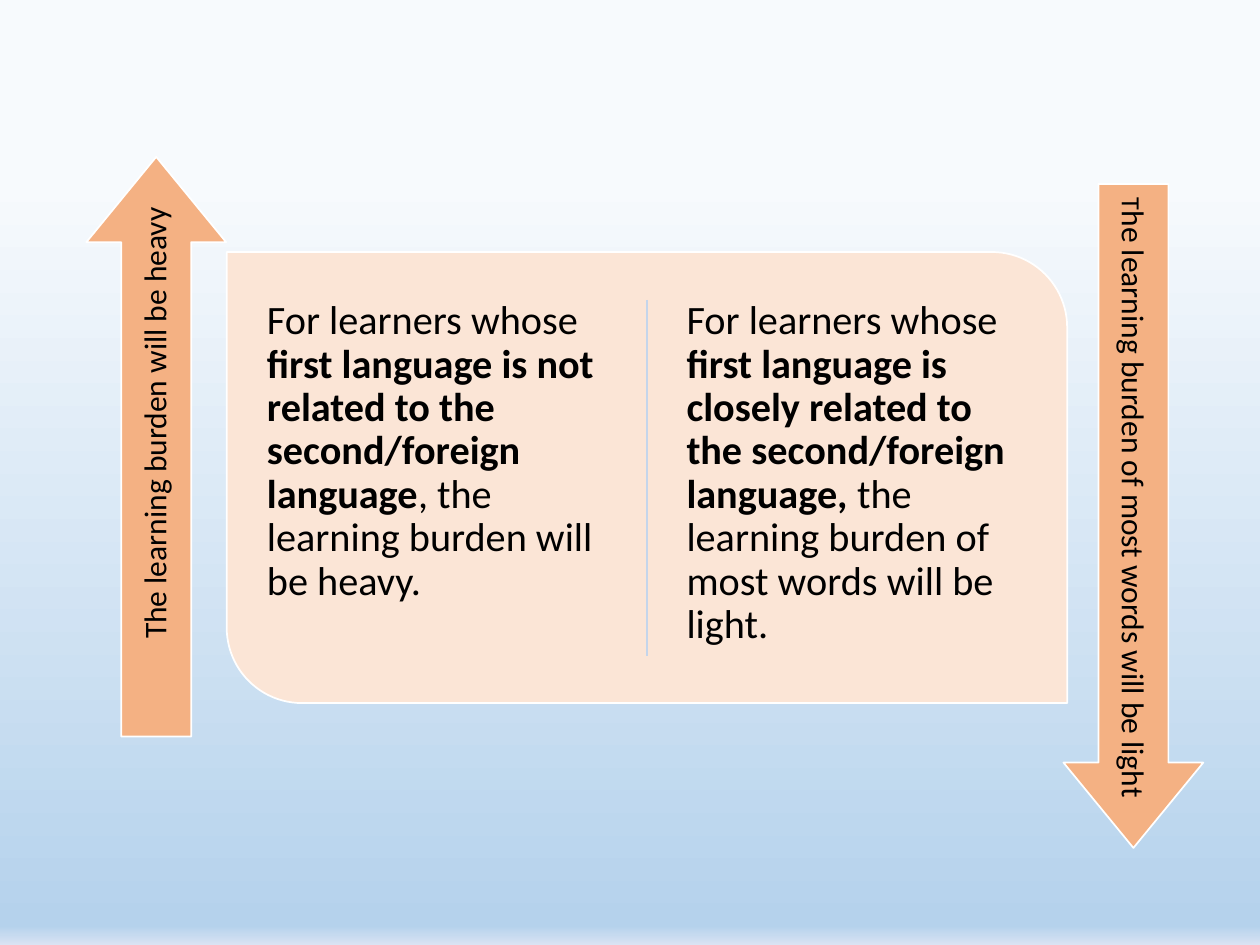
from copy import deepcopy
from dataclasses import dataclass

from pptx import Presentation
from pptx.dml.color import RGBColor
from pptx.enum.shapes import MSO_CONNECTOR, MSO_SHAPE
from pptx.enum.text import MSO_ANCHOR, PP_ALIGN
from pptx.oxml.ns import qn
from pptx.util import Inches, Pt
from lxml.etree import SubElement


@dataclass(frozen=True)
class Frame:
    """Position, size and rotation, in inches and degrees."""
    left: float
    top: float
    width: float
    height: float
    rotation: float = 0

    def lengths(self):
        """Return the four lengths that python-pptx expects."""
        return [Inches(value) for value in (self.left, self.top, self.width, self.height)]


@dataclass(frozen=True)
class Span:
    """A piece of text with one size and weight."""
    text: str
    size: float
    bold: bool = False


@dataclass(frozen=True)
class Arrow:
    """A rotated arrow and the label that runs along it."""
    frame: Frame
    label_frame: Frame
    spans: tuple[Span, ...]
    inset: float


BACKGROUND_STOPS = ((0.19, "F7FAFD"), (0.98, "B5D2EC"), (1, "DAE3F3"), (1, "CEE1F2"))
PANEL = Frame(1.8, 2, 6.67, 3.58)
COLUMNS = (
    (2.02, "first language is not related to the second/foreign language",
     ", the learning burden will be heavy."),
    (5.35, "first language is closely related to the second/foreign language,",
     " the learning burden of most words will be light."),
)
ARROWS = (
    Arrow(Frame(-1.06, 2.99, 4.6, 1.11, 270), Frame(-0.89, 3.43, 4.26, 0.55, 270),
          (Span("The learning burden will be heavy", 18),), 0.07),
    Arrow(Frame(6.36, 3.54, 5.27, 1.11, 90), Frame(6.52, 3.65, 4.93, 0.55, 90),
          (Span("T", 15), Span("he learning burden of most words will be light", 18)), 0.06),
)


def color(value: str) -> RGBColor:
    """Turn a hex string into a colour."""
    return RGBColor.from_string(value)


def paint_background(page) -> None:
    """Fill the page with a vertical gradient."""
    fill = page.background.fill
    fill.gradient()
    fill.gradient_angle = 270
    stop_list = page.element.find(".//" + qn("a:gsLst"))
    while len(stop_list) < len(BACKGROUND_STOPS):
        stop_list.append(deepcopy(stop_list[0]))
    for stop, (position, value) in zip(fill.gradient_stops, BACKGROUND_STOPS):
        stop.position = position
        stop.color.rgb = color(value)


def add_block(page, kind: MSO_SHAPE, frame: Frame, fill: str,
              adjustments: tuple[float, ...]) -> None:
    """Draw a filled shape with a thin white outline."""
    block = page.shapes.add_shape(kind, *frame.lengths())
    block.rotation = frame.rotation
    block.shadow.inherit = False
    block.fill.solid()
    block.fill.fore_color.rgb = color(fill)
    block.line.color.rgb = color("FFFFFF")
    block.line.width = Pt(1)
    for index, value in enumerate(adjustments):
        block.adjustments[index] = value


def add_text(page, frame: Frame, spans: tuple[Span, ...], *, inset: float = 0.1,
             align: PP_ALIGN = PP_ALIGN.LEFT, anchor: MSO_ANCHOR = MSO_ANCHOR.TOP) -> None:
    """Draw one paragraph of formatted spans."""
    box = page.shapes.add_textbox(*frame.lengths())
    box.rotation = frame.rotation
    text_frame = box.text_frame
    text_frame.word_wrap = True
    text_frame.vertical_anchor = anchor
    text_frame.margin_left = text_frame.margin_right = Inches(inset)
    text_frame.margin_top = text_frame.margin_bottom = Inches(inset)
    para = text_frame.paragraphs[0]
    para.alignment = align
    para.line_spacing = 0.9
    for span in spans:
        run = para.add_run()
        run.text = span.text
        run.font.name = "Calibri"
        run.font.size = Pt(span.size)
        run.font.bold = span.bold
        run.font.color.rgb = color("000000")


def add_divider(page, x: float, top: float, bottom: float) -> None:
    """Draw the thin line between the two columns."""
    divider = page.shapes.add_connector(
        MSO_CONNECTOR.STRAIGHT, Inches(x), Inches(top), Inches(x), Inches(bottom))
    divider.line.color.rgb = color("C4D5EB")
    divider.line.width = Pt(1)
    SubElement(divider.element.spPr, qn("a:effectLst"))


def main() -> None:
    """Build and save the deck."""
    deck = Presentation()
    deck.slide_width, deck.slide_height = Inches(10), Inches(7.5)
    page = deck.slides.add_slide(deck.slide_layouts[6])
    paint_background(page)
    add_block(page, MSO_SHAPE.ROUND_2_DIAG_RECTANGLE, PANEL, "FBE5D6", (0, 0.167))
    add_divider(page, PANEL.left + PANEL.width / 2, 2.38, 5.21)
    for left, relation, burden in COLUMNS:
        add_text(page, Frame(left, 2.28, 2.89, 3.04),
                 (Span("For learners whose ", 23), Span(relation, 23, True), Span(burden, 23)))
    for arrow in ARROWS:
        add_block(page, MSO_SHAPE.RIGHT_ARROW, arrow.frame, "F4B183", (0.5, 0.61))
        add_text(page, arrow.label_frame, arrow.spans, inset=arrow.inset,
                 align=PP_ALIGN.RIGHT, anchor=MSO_ANCHOR.MIDDLE)
    deck.save("out.pptx")


if __name__ == "__main__":
    main()
